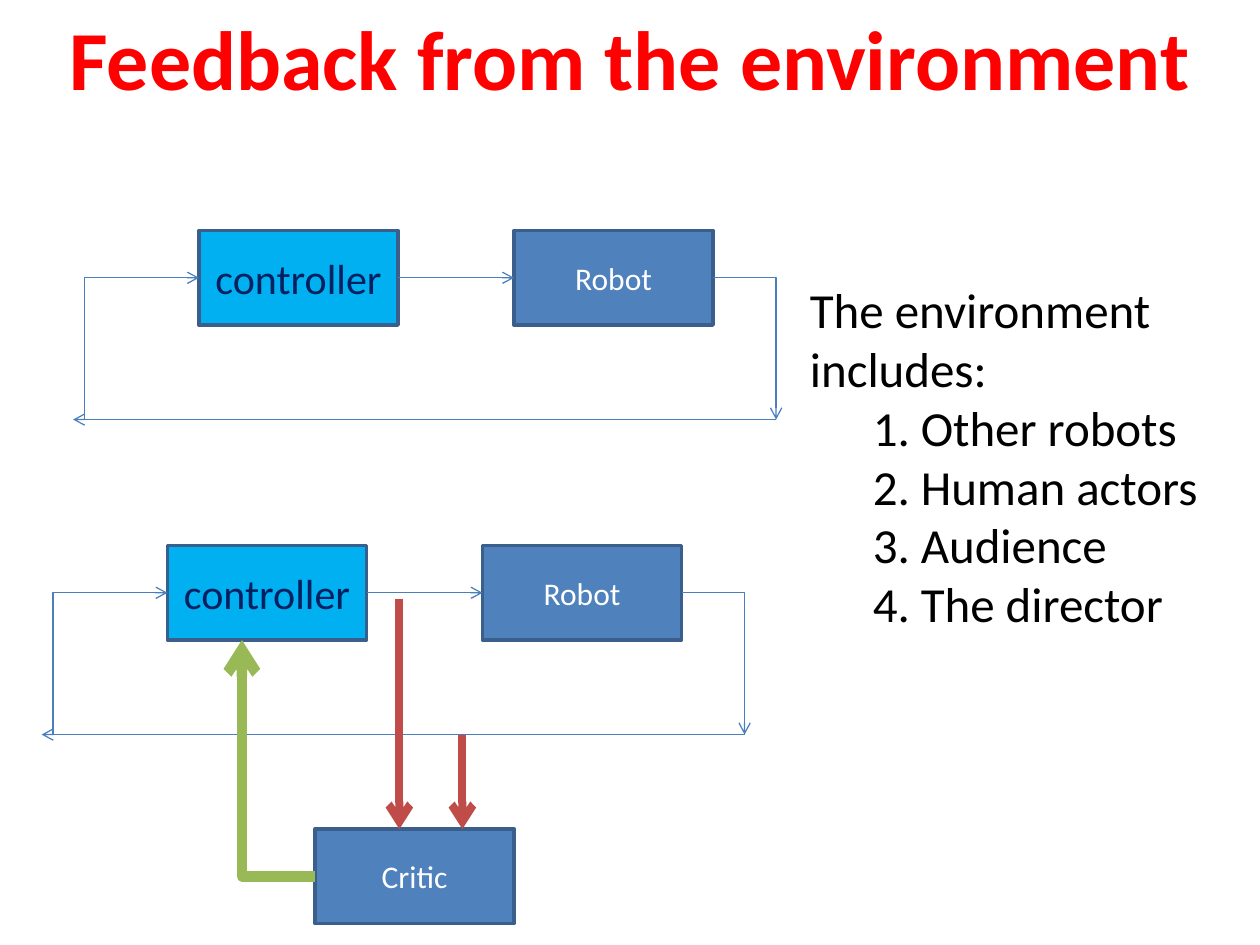
import pptx
import pptx.util
import pptx.dml.color
import pptx.enum.shapes
import pptx.enum.text
import pptx.oxml.ns
from lxml import etree

Inches = pptx.util.Inches
Align = pptx.enum.text.PP_ALIGN
Anchor = pptx.enum.text.MSO_ANCHOR
qn = pptx.oxml.ns.qn

TITLE = "Feedback from the environment"
LIST_HEADING = "The environment includes:"
ENVIRONMENT = ["Other robots", "Human actors", "Audience", "The director"]
LOOP_ORIGINS = [(1.58, 1.83), (1.33, 4.33)]  # top left of each controller
CRITIC = (2.5, 6.58)

BOX_WIDTH, BOX_HEIGHT = 1.58, 0.75
BOX_STEP = 2.5
RETURN_DROP = 1.5
BLUE, CYAN, NAVY, EDGE = "4F81BD", "00B0F0", "002060", "3A5F8C"
LINE_BLUE, RED, GREEN = "4B7EBC", "BF4C48", "98B955"


def rgb(value):
    return pptx.dml.color.RGBColor.from_string(value)


def write(para, text, size=18, color="000000", bold=False, align=Align.LEFT):
    para.alignment = align
    span = para.add_run()
    span.text = text
    span.font.name = "Calibri"
    span.font.size = pptx.util.Pt(size)
    span.font.bold = bold
    span.font.color.rgb = rgb(color)


def add_block(slide, text, left, top, fill=BLUE, size=18, color="FFFFFF"):
    block = slide.shapes.add_shape(
        pptx.enum.shapes.MSO_SHAPE.RECTANGLE,
        Inches(left), Inches(top), Inches(BOX_WIDTH), Inches(BOX_HEIGHT))
    block.shadow.inherit = False
    block.fill.solid()
    block.fill.fore_color.rgb = rgb(fill)
    block.line.color.rgb = rgb(EDGE)
    block.line.width = pptx.util.Pt(2)
    block.text_frame.word_wrap = True
    block.text_frame.vertical_anchor = Anchor.MIDDLE
    write(block.text_frame.paragraphs[0], text, size=size, color=color, align=Align.CENTER)


def add_arrow(slide, start, end, color=LINE_BLUE, width=0.75, bent=False, tip="tailEnd"):
    """Draw an arrow; a bent one runs sideways first, then up or down."""
    arrow = slide.shapes.add_connector(
        pptx.enum.shapes.MSO_CONNECTOR.STRAIGHT, *map(Inches, start + end))
    arrow.line.color.rgb = rgb(color)
    arrow.line.width = pptx.util.Pt(width)
    properties = arrow.element.spPr
    if bent:
        properties.find(qn("a:prstGeom")).set("prst", "bentConnector2")
    etree.SubElement(properties.find(qn("a:ln")), qn("a:" + tip)).set("type", "arrow")
    etree.SubElement(properties, qn("a:effectLst"))


def add_loop(slide, left, top):
    """Draw controller, robot and the feedback line that joins them."""
    robot = left + BOX_STEP
    middle = top + BOX_HEIGHT / 2
    bottom = top + RETURN_DROP
    right = robot + BOX_WIDTH
    add_block(slide, "Robot", robot, top)
    add_block(slide, "controller", left, top, fill=CYAN, size=24, color=NAVY)
    add_arrow(slide, (left + BOX_WIDTH, middle), (robot, middle))
    add_arrow(slide, (right, middle), (right + 0.5, bottom), bent=True)
    add_arrow(slide, (right + 0.5, bottom), (left - 1, bottom))
    add_arrow(slide, (left, middle), (left - 0.91, bottom), bent=True, tip="headEnd")


def add_critic(slide):
    left, top = CRITIC
    add_block(slide, "Critic", left, top)
    for x, start in [(3.17, 4.75), (3.67, 5.83)]:
        add_arrow(slide, (x, start), (x, top), color=RED, width=4.5)
    add_arrow(slide, (left, top + BOX_HEIGHT / 2), (1.92, 5.08),
              color=GREEN, width=6, bent=True)


def add_title(slide):
    title = slide.shapes.title
    title.left, title.top, title.width, title.height = map(Inches, (0, 0, 10, 0.91))
    title.text_frame.vertical_anchor = Anchor.TOP
    write(title.text_frame.paragraphs[0], TITLE, size=48, color="FF0000",
          bold=True, align=Align.CENTER)


def add_environment_list(slide):
    box = slide.shapes.add_textbox(*map(Inches, (6.33, 2.17, 3.67, 2.93)))
    frame = box.text_frame
    frame.word_wrap = True
    write(frame.paragraphs[0], LIST_HEADING, size=28)
    for item in ENVIRONMENT:
        para = frame.add_paragraph()
        write(para, item, size=28)
        para.level = 1
        properties = para._p.get_or_add_pPr()
        properties.set("marL", str(Inches(0.88)))
        properties.set("indent", str(Inches(-0.38)))
        etree.SubElement(properties, qn("a:buAutoNum")).set("type", "arabicPeriod")


def main():
    deck = pptx.Presentation()
    deck.slide_width, deck.slide_height = Inches(10), Inches(7.5)
    slide = deck.slides.add_slide(deck.slide_layouts[5])
    for left, top in LOOP_ORIGINS:
        add_loop(slide, left, top)
    add_critic(slide)
    add_title(slide)
    add_environment_list(slide)
    deck.save("out.pptx")


if __name__ == "__main__":
    main()
